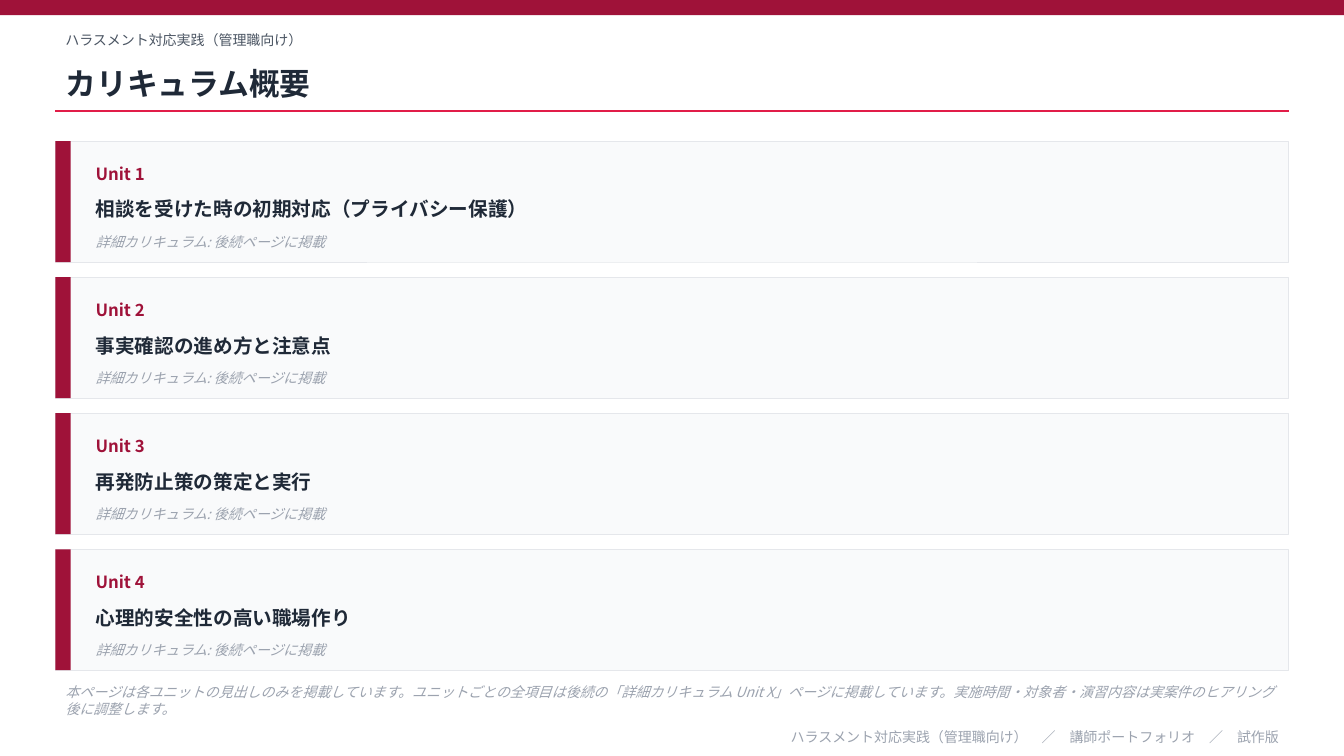
from dataclasses import dataclass

from lxml import etree
from pptx import Presentation
from pptx.dml.color import RGBColor
from pptx.enum import shapes, text
from pptx.oxml import ns
from pptx.util import Inches, Pt


@dataclass(frozen=True)
class Theme:
    """Colours, type sizes and typeface of the slide."""
    font: str = "Noto Sans CJK JP"
    brand: str = "9F1239"
    rule: str = "E11D48"
    ink: str = "1F2937"
    subtle: str = "4B5563"
    muted: str = "9CA3AF"
    panel: str = "F9FAFB"
    border: str = "E5E7EB"
    title: int = 22
    heading: int = 14
    label: int = 12
    small: int = 10


THEME = Theme()
WIDTH, HEIGHT = 13.33, 7.5
MARGIN = 0.55
CONTENT_WIDTH = WIDTH - 2 * MARGIN
COURSE = "ハラスメント対応実践（管理職向け）"
UNITS = [
    "相談を受けた時の初期対応（プライバシー保護）",
    "事実確認の進め方と注意点",
    "再発防止策の策定と実行",
    "心理的安全性の高い職場作り",
]
UNIT_DETAIL = "詳細カリキュラム: 後続ページに掲載"
NOTE = ("本ページは各ユニットの見出しのみを掲載しています。"
        "ユニットごとの全項目は後続の「詳細カリキュラム Unit X」ページに掲載しています。"
        "実施時間・対象者・演習内容は実案件のヒアリング後に調整します。")
FOOTER = f"{COURSE}　／　講師ポートフォリオ　／　試作版"


def write(sp, content, size, color, bold=False, italic=False, align=text.PP_ALIGN.LEFT):
    """Fill a shape with one formatted, vertically centred paragraph."""
    tf = sp.text_frame
    tf.word_wrap = True
    tf.auto_size = text.MSO_AUTO_SIZE.NONE
    tf.vertical_anchor = text.MSO_ANCHOR.MIDDLE
    p = tf.paragraphs[0]
    p.text = content
    p.alignment = align
    font = p.font
    font.name, font.size = THEME.font, Pt(size)
    font.bold, font.italic = bold, italic
    font.color.rgb = RGBColor.from_string(color)
    props = p._p.pPr.find(ns.qn("a:defRPr"))
    etree.SubElement(props, ns.qn("a:ea"), typeface=THEME.font)


def add_text(s, x, y, w, h, content, size, color, **style):
    """Add a text box at a position in inches."""
    sp = s.shapes.add_textbox(Inches(x), Inches(y), Inches(w), Inches(h))
    write(sp, content, size, color, **style)


def add_rect(s, x, y, w, h, fill, line=None):
    """Add a flat rectangle with an optional thin border."""
    sp = s.shapes.add_shape(shapes.MSO_SHAPE.RECTANGLE,
                            Inches(x), Inches(y), Inches(w), Inches(h))
    sp.shadow.inherit = False
    sp.fill.solid()
    sp.fill.fore_color.rgb = RGBColor.from_string(fill)
    if line:
        sp.line.color.rgb = RGBColor.from_string(line)
        sp.line.width = Pt(0.5)
    else:
        sp.line.fill.background()


def add_header(s, x, y, w):
    """Place the top band, course name, title and rule."""
    add_rect(s, 0, 0, WIDTH, 0.15, THEME.brand)
    add_text(s, x, y, w, 0.3, COURSE, THEME.small, THEME.subtle)
    title = s.shapes.title
    title.left, title.top = Inches(x), Inches(y + 0.3)
    title.width, title.height = Inches(w), Inches(0.55)
    write(title, "カリキュラム概要", THEME.title, THEME.ink, bold=True)
    rule_y = Inches(y + 0.85)
    rule = s.shapes.add_connector(shapes.MSO_CONNECTOR.STRAIGHT,
                                  Inches(x), rule_y, Inches(x + w), rule_y)
    rule.line.color.rgb = RGBColor.from_string(THEME.rule)
    rule.line.width = Pt(1)
    etree.SubElement(rule._element.spPr, ns.qn("a:effectLst"))


def add_unit_card(s, x, y, w, h, number, heading):
    """Place one unit card with its accent bar and three lines of text."""
    add_rect(s, x, y, w, h, THEME.panel, THEME.border)
    add_rect(s, x, y, 0.15, h, THEME.brand)
    left, width = x + 0.3, w - 0.5
    add_text(s, left, y + 0.12, 1.5, 0.4, f"Unit {number}",
             THEME.label, THEME.brand, bold=True)
    add_text(s, left, y + 0.45, width, 0.45, heading,
             THEME.heading, THEME.ink, bold=True)
    add_text(s, left, y + 0.85, width, 0.3, UNIT_DETAIL,
             THEME.small, THEME.muted, italic=True)


def add_units(s, x, y, w, h, gap=0.15):
    """Stack the unit cards evenly in the given box."""
    card_h = (h - gap * (len(UNITS) - 1)) / len(UNITS)
    for i, heading in enumerate(UNITS):
        add_unit_card(s, x, y + i * (card_h + gap), w, card_h, i + 1, heading)


def add_footer(s, x, y, w):
    """Place the explanatory note and the footer line."""
    add_text(s, x, y, w, 0.4, NOTE, THEME.small, THEME.muted, italic=True)
    add_text(s, x, y + 0.45, w, 0.22, FOOTER, THEME.small, THEME.muted,
             align=text.PP_ALIGN.RIGHT)


def main():
    """Build and save the curriculum overview slide."""
    prs = Presentation()
    prs.slide_width, prs.slide_height = Inches(WIDTH), Inches(HEIGHT)
    s = prs.slides.add_slide(prs.slide_layouts.get_by_name("Title Only"))
    add_header(s, MARGIN, 0.25, CONTENT_WIDTH)
    add_units(s, MARGIN, 1.4, CONTENT_WIDTH, 5.25)
    add_footer(s, MARGIN, 6.75, CONTENT_WIDTH)
    prs.save("out.pptx")


if __name__ == "__main__":
    main()
